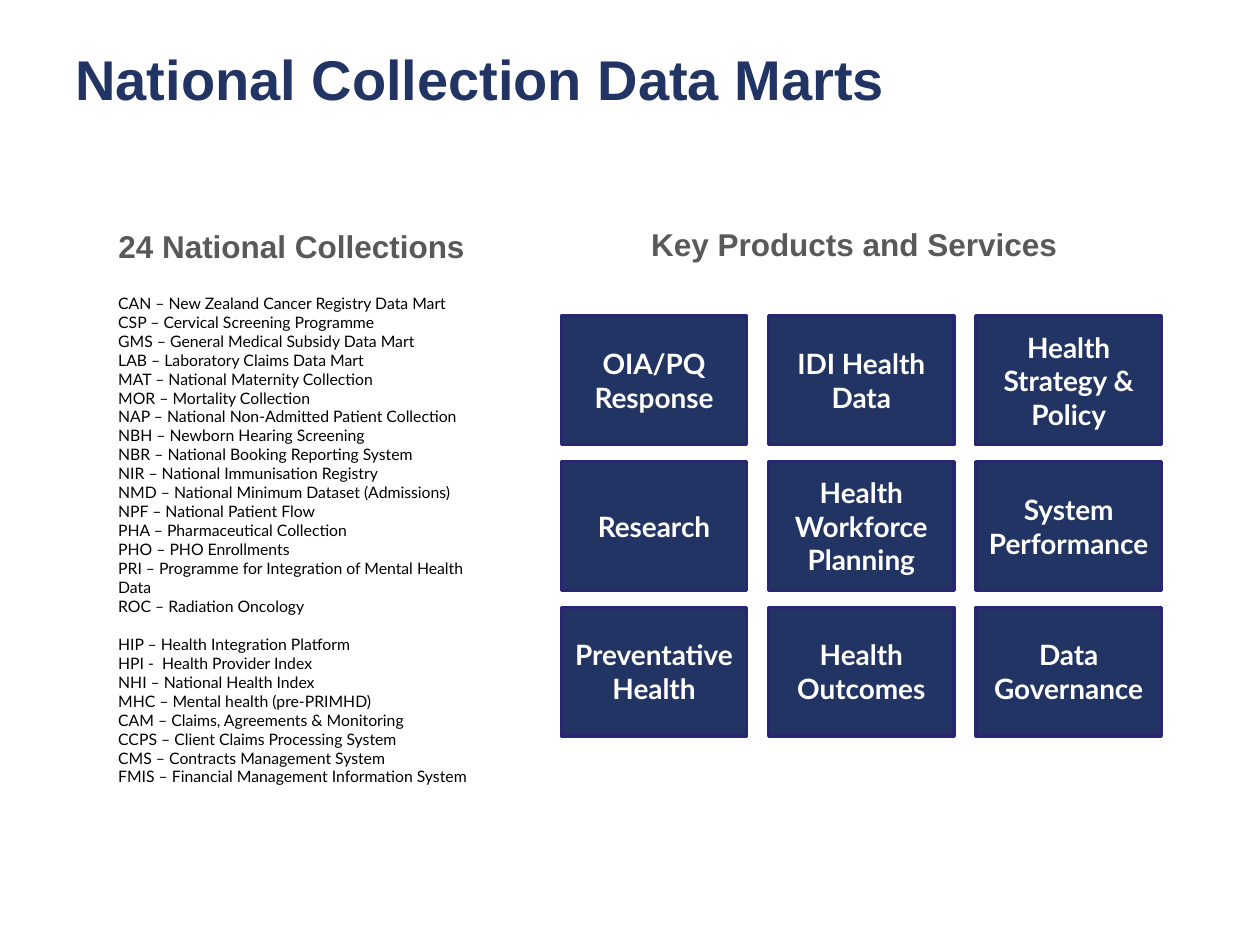
from pptx import Presentation
from pptx.dml.color import RGBColor
from pptx.enum.shapes import MSO_SHAPE
from pptx.enum.text import MSO_ANCHOR, PP_ALIGN
from pptx.util import Pt

RECTANGLE = MSO_SHAPE.RECTANGLE
MIDDLE = MSO_ANCHOR.MIDDLE
CENTER = PP_ALIGN.CENTER

NAVY = RGBColor(0x21, 0x34, 0x63)
INDIGO = RGBColor(0x26, 0x26, 0x71)
GREY = RGBColor(0x59, 0x59, 0x59)
BLACK = RGBColor(0x00, 0x00, 0x00)
WHITE = RGBColor(0xFF, 0xFF, 0xFF)

COLLECTIONS = [
    "CAN – New Zealand Cancer Registry Data Mart",
    "CSP – Cervical Screening Programme",
    "GMS – General Medical Subsidy Data Mart",
    "LAB – Laboratory Claims Data Mart",
    "MAT – National Maternity Collection",
    "MOR – Mortality Collection",
    "NAP – National Non-Admitted Patient Collection",
    "NBH – Newborn Hearing Screening",
    "NBR – National Booking Reporting System",
    "NIR – National Immunisation Registry",
    "NMD – National Minimum Dataset (Admissions)",
    "NPF – National Patient Flow",
    "PHA – Pharmaceutical Collection",
    "PHO – PHO Enrollments",
    "PRI – Programme for Integration of Mental Health Data",
    "ROC – Radiation Oncology",
]
SYSTEMS = [
    "HIP – Health Integration Platform",
    "HPI -  Health Provider Index",
    "NHI – National Health Index",
    "MHC – Mental health (pre-PRIMHD)",
    "CAM – Claims, Agreements & Monitoring",
    "CCPS – Client Claims Processing System",
    "CMS – Contracts Management System",
    "FMIS – Financial Management Information System",
]
PRODUCTS = [
    ["OIA/PQ Response", "IDI Health Data", "Health Strategy & Policy"],
    ["Research", "Health Workforce Planning", "System Performance"],
    ["Preventative Health", "Health Outcomes", "Data Governance"],
]


def style_text(text_frame, name, size, color, bold=False):
    text_frame.word_wrap = True
    for paragraph in text_frame.paragraphs:
        for run in paragraph.runs:
            run.font.name = name
            run.font.size = Pt(size)
            run.font.bold = bold
            run.font.color.rgb = color


def add_text(slide, text, left, top, width, height, name, size, color, bold=False):
    box = slide.shapes.add_textbox(Pt(left), Pt(top), Pt(width), Pt(height))
    box.text_frame.text = text
    style_text(box.text_frame, name, size, color, bold)
    return box.text_frame


def add_collection_list(slide, left, top, width, height):
    """Place both lists in one box, set apart by the height of a line."""
    text = "\n".join(COLLECTIONS + SYSTEMS)
    text_frame = add_text(slide, text, left, top, width, height, "Lato", 9, BLACK)
    text_frame.paragraphs[len(COLLECTIONS)].space_before = Pt(10.8)


def add_product_grid(slide, left, top, width, height, gap_x=12.6, gap_y=9.7):
    group = slide.shapes.add_group_shape()
    rows, columns = len(PRODUCTS), len(PRODUCTS[0])
    tile_width = (width - gap_x * (columns - 1)) / columns
    tile_height = (height - gap_y * (rows - 1)) / rows
    for row, names in enumerate(PRODUCTS):
        for column, name in enumerate(names):
            tile = group.shapes.add_shape(
                RECTANGLE,
                Pt(left + column * (tile_width + gap_x)),
                Pt(top + row * (tile_height + gap_y)),
                Pt(tile_width), Pt(tile_height))
            tile.shadow.inherit = False
            tile.fill.solid()
            tile.fill.fore_color.rgb = NAVY
            tile.line.color.rgb = INDIGO
            tile.line.width = Pt(2)
            tile.text_frame.text = name
            tile.text_frame.vertical_anchor = MIDDLE
            tile.text_frame.paragraphs[0].alignment = CENTER
            style_text(tile.text_frame, "Lato", 16, WHITE, bold=True)


def main():
    presentation = Presentation()
    presentation.slide_width = Pt(720)
    presentation.slide_height = Pt(540)
    slide = presentation.slides.add_slide(presentation.slide_layouts[6])

    add_text(slide, "National Collection Data Marts", 36, 21.6, 648, 90,
             "Arial", 32, NAVY, bold=True)
    add_text(slide, "24 National Collections", 60.5, 126, 214.6, 29,
             "Arial", 18, GREY, bold=True)
    add_collection_list(slide, 60.5, 164.2, 220.3, 280)
    add_text(slide, "Key Products and Services", 365, 125.3, 249.1, 29,
             "Arial", 18, GREY, bold=True)
    add_product_grid(slide, 320.8, 180.7, 342.8, 239.8)

    presentation.save("out.pptx")


if __name__ == "__main__":
    main()
